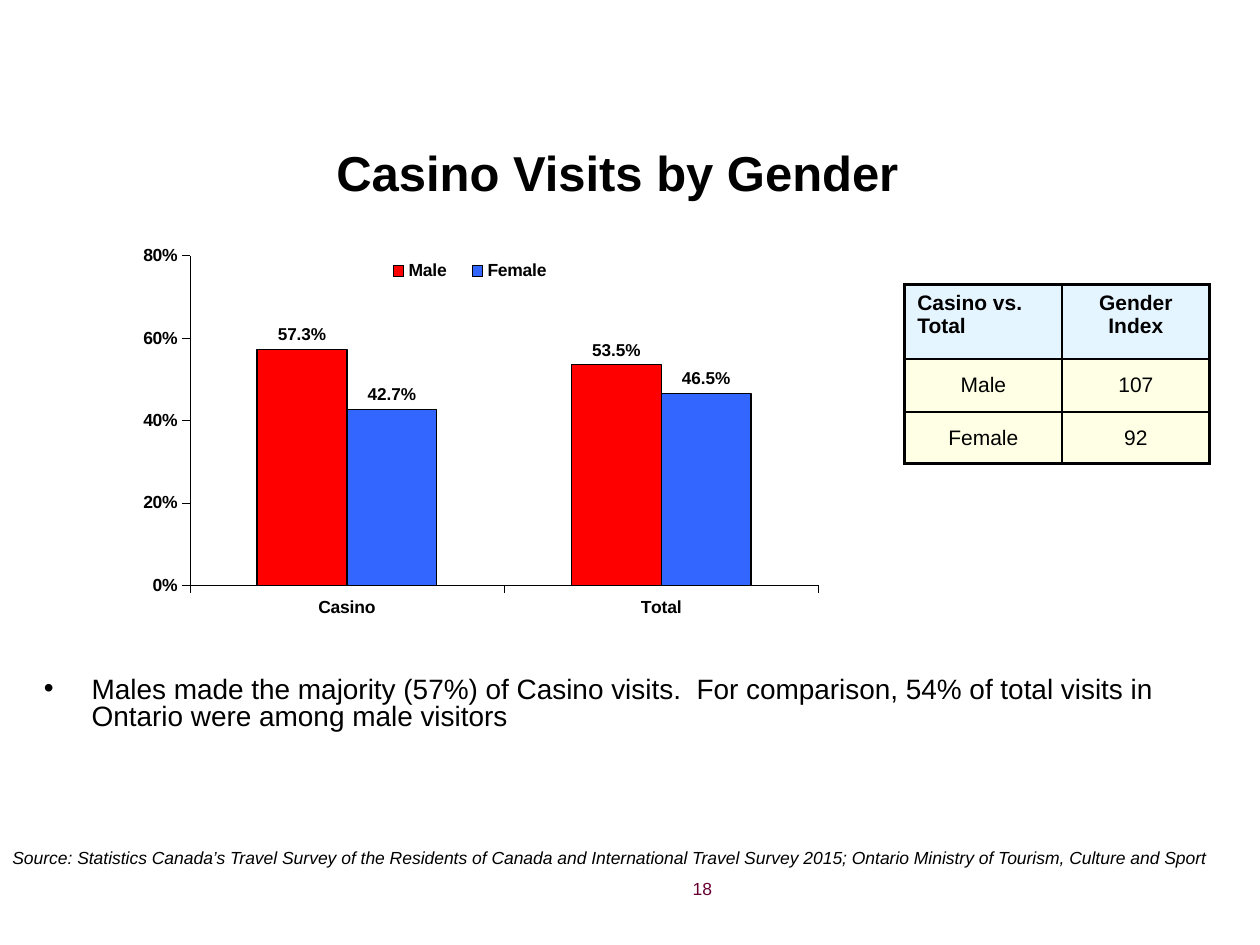
"""Build the slide on casino visits by gender."""
from lxml.etree import SubElement
from pptx import Presentation
from pptx.chart.data import CategoryChartData
from pptx.dml.color import RGBColor
from pptx.enum.chart import XL_CHART_TYPE, XL_LABEL_POSITION, XL_LEGEND_POSITION, XL_TICK_MARK
from pptx.enum.text import MSO_ANCHOR, PP_ALIGN
from pptx.oxml import parse_xml
from pptx.oxml.ns import nsdecls, qn
from pptx.util import Inches, Pt

TITLE = "Casino Visits by Gender"
FINDING = ("Males made the majority (57%) of Casino visits.  For comparison, "
           "54% of total visits in Ontario were among male visitors")
SOURCE = ("Source: Statistics Canada’s Travel Survey of the Residents of Canada and International "
          "Travel Survey 2015; Ontario Ministry of Tourism, Culture and Sport")
PAGE_NUMBER = "18"

BLACK = RGBColor(0x00, 0x00, 0x00)
PLUM = RGBColor(0x66, 0x00, 0x33)
RED = RGBColor(0xFF, 0x00, 0x00)
BLUE = RGBColor(0x33, 0x66, 0xFF)
PALE_BLUE = RGBColor(0xCC, 0xEC, 0xFF)
PALE_YELLOW = RGBColor(0xFF, 0xFF, 0xCC)

CATEGORIES = ["Casino", "Total"]
SERIES = [("Male", [0.573, 0.535], RED), ("Female", [0.427, 0.465], BLUE)]
INDEX_ROWS = [("Casino vs. Total", "Gender Index"), ("Male", "107"), ("Female", "92")]
COLUMN_WIDTHS = [1.25, 1.17]
ROW_HEIGHTS = [0.59, 0.42, 0.41]
PLOT_AREA = {"x": 0.099, "y": 0.053, "w": 0.653, "h": 0.694}
LEGEND_AREA = {"x": 0.29, "y": 0.055, "w": 0.2, "h": 0.06}


def style(font, size, color=BLACK, bold=False, italic=False):
    font.name, font.size, font.bold, font.italic = "Arial", Pt(size), bold, italic
    font.color.rgb = color


def write(frame, text, size, align=PP_ALIGN.LEFT, **look):
    frame.word_wrap = True
    para = frame.paragraphs[0]
    para.alignment = align
    span = para.add_run()
    span.text = text
    style(span.font, size, **look)
    return para


def add_text(page, area, text, size, **look):
    box = page.shapes.add_textbox(*map(Inches, area))
    return write(box.text_frame, text, size, **look)


def add_bullet(para, indent):
    props = para._p.get_or_add_pPr()
    props.set("marL", str(Inches(indent)))
    props.set("indent", str(-Inches(indent)))
    SubElement(props, qn("a:buFont"), typeface="Arial")
    SubElement(props, qn("a:buChar"), char="•")


def place(element, area, inner=False):
    for old in element.findall(qn("c:layout")):
        element.remove(old)
    target = '<c:layoutTarget val="inner"/>' if inner else ""
    modes = "".join(f'<c:{axis}Mode val="edge"/>' for axis in "xy")
    sizes = "".join(f'<c:{key} val="{value}"/>' for key, value in area.items())
    layout = parse_xml(f'<c:layout {nsdecls("c")}><c:manualLayout>{target}{modes}{sizes}'
                       '</c:manualLayout></c:layout>')
    element.insert(0 if inner else 1, layout)


def add_visits_chart(page):
    data = CategoryChartData(number_format="0.0%")
    data.categories = CATEGORIES
    for name, values, _ in SERIES:
        data.add_series(name, values)
    area = map(Inches, (0.75, 1.83, 7.64, 3.77))
    chart = page.shapes.add_chart(XL_CHART_TYPE.COLUMN_CLUSTERED, *area, data).chart
    style(chart.font, 10, bold=True)
    chart.has_title = False
    chart.has_legend = True
    chart.legend.position = XL_LEGEND_POSITION.TOP
    chart.legend.include_in_layout = False
    style(chart.legend.font, 10, bold=True)
    place(chart.legend._element, LEGEND_AREA)
    place(chart._chartSpace.chart.plotArea, PLOT_AREA, inner=True)

    for axis in (chart.category_axis, chart.value_axis):
        axis.has_major_gridlines = False
        axis.major_tick_mark = XL_TICK_MARK.OUTSIDE
        axis.format.line.color.rgb = BLACK
        axis.format.line.width = Pt(0.19)
        style(axis.tick_labels.font, 10, bold=True)
    scale = chart.value_axis
    scale.minimum_scale, scale.maximum_scale, scale.major_unit = 0, 0.8, 0.2
    scale.tick_labels.number_format = "0%"
    scale.tick_labels.number_format_is_linked = False

    plot = chart.plots[0]
    plot.gap_width, plot.overlap, plot.vary_by_categories = 150, 0, False
    for bars, (_, _, color) in zip(plot.series, SERIES):
        bars.format.fill.solid()
        bars.format.fill.fore_color.rgb = color
        bars.format.line.color.rgb = BLACK
        bars.format.line.width = Pt(0.75)
        labels = bars.data_labels
        labels.show_value = True
        labels.position = XL_LABEL_POSITION.OUTSIDE_END
        labels.number_format, labels.number_format_is_linked = "0.0%", False
        style(labels.font, 9.8, bold=True)


def format_cell(cell, color, outer_sides):
    props = cell._tc.get_or_add_tcPr()
    for side in "LRTB":
        width = Pt(2.25 if side in outer_sides else 1)
        line = SubElement(props, qn(f"a:ln{side}"), w=str(width))
        SubElement(SubElement(line, qn("a:solidFill")), qn("a:srgbClr"), val=str(BLACK))
    cell.fill.solid()
    cell.fill.fore_color.rgb = color
    SubElement(props.find(qn("a:solidFill"))[0], qn("a:alpha"), val="50000")


def add_index_table(page):
    area = map(Inches, (7.18, 2.26, sum(COLUMN_WIDTHS), sum(ROW_HEIGHTS)))
    table = page.shapes.add_table(len(INDEX_ROWS), len(COLUMN_WIDTHS), *area).table
    table.first_row = table.horz_banding = False
    for column, width in zip(table.columns, COLUMN_WIDTHS):
        column.width = Inches(width)
    for r, (row, height, texts) in enumerate(zip(table.rows, ROW_HEIGHTS, INDEX_ROWS)):
        row.height = Inches(height)
        header = r == 0
        for c, text in enumerate(texts):
            cell = table.cell(r, c)
            if not header:
                cell.vertical_anchor = MSO_ANCHOR.MIDDLE
                cell.margin_left = cell.margin_right = cell.margin_top = cell.margin_bottom = 0
            align = PP_ALIGN.LEFT if header and c == 0 else PP_ALIGN.CENTER
            write(cell.text_frame, text, 12, align, bold=header)
            outer_sides = "LR"[c] + ("T" if header else "")
            outer_sides += "B" if r == len(INDEX_ROWS) - 1 else ""
            format_cell(cell, PALE_BLUE if header else PALE_YELLOW, outer_sides)


def main():
    deck = Presentation()
    deck.slide_width, deck.slide_height = Inches(10), Inches(7.5)
    page = deck.slides.add_slide(deck.slide_layouts[5])
    title = page.shapes.title
    title.left, title.top, title.width, title.height = map(Inches, (0.4, 1.08, 9, 0.75))
    title.text_frame.vertical_anchor = MSO_ANCHOR.TOP
    write(title.text_frame, TITLE, 28, PP_ALIGN.CENTER, bold=True)

    add_index_table(page)
    finding = add_text(page, (0.25, 5.33, 9.5, 1.43), FINDING, 16)
    add_bullet(finding, 0.38)
    finding.line_spacing = 0.8
    add_text(page, (5.08, 6.92, 0.67, 0.35), PAGE_NUMBER, 10, align=PP_ALIGN.RIGHT, color=PLUM)
    add_visits_chart(page)
    add_text(page, (0, 6.67, 9.8, 0.27), SOURCE, 10, italic=True)
    deck.save("out.pptx")


if __name__ == "__main__":
    main()
